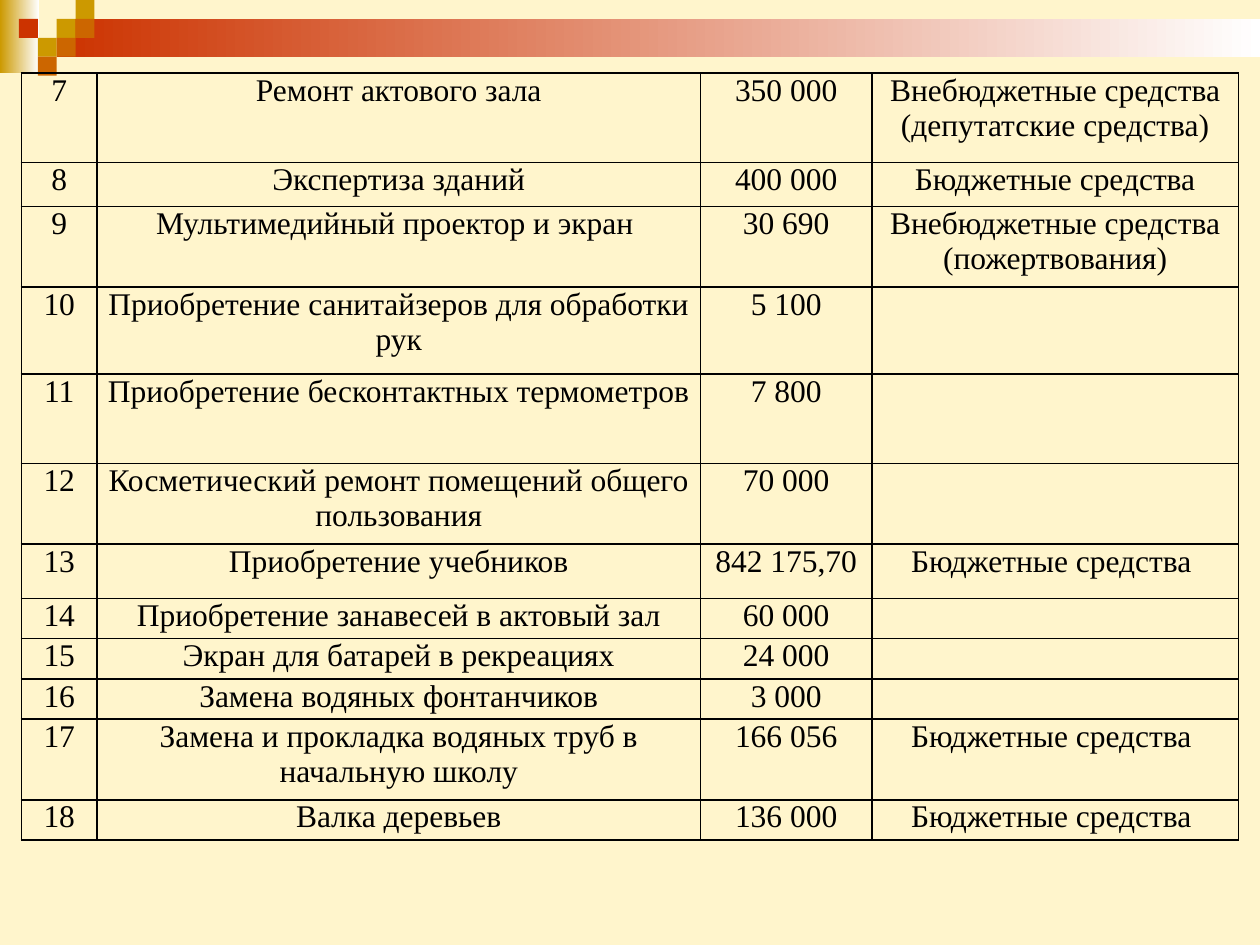
from lxml import etree
from pptx import Presentation
from pptx.dml.color import RGBColor
from pptx.enum import shapes, text
from pptx.oxml import parse_xml
from pptx.oxml.ns import nsdecls
from pptx.util import Inches, Pt

CREAM = RGBColor(0xFF, 0xF5, 0xCC)
GOLD = RGBColor(0xCC, 0x99, 0x00)
RED = RGBColor(0xCC, 0x33, 0x00)
ORANGE = RGBColor(0xCC, 0x66, 0x00)
WHITE = RGBColor(0xFF, 0xFF, 0xFF)
BLACK = RGBColor(0x00, 0x00, 0x00)

BUDGET = "Бюджетные средства"
EXTRA = "Внебюджетные средства"
COL_WIDTHS = [0.6, 4.79, 1.36, 2.91]
FIRST_NUMBER = 7
# Row height, expense, amount, source of funds
EXPENSES = [
    (0.71, "Ремонт актового зала", "350 000", EXTRA + " (депутатские средства)"),
    (0.35, "Экспертиза зданий", "400 000", BUDGET),
    (0.64, "Мультимедийный проектор и экран ", "30 690", EXTRA + " (пожертвования)"),
    (0.69, "Приобретение санитайзеров для обработки рук", "5 100", ""),
    (0.71, "Приобретение бесконтактных термометров", "7 800", ""),
    (0.64, "Косметический ремонт помещений общего пользования", "70 000", ""),
    (0.43, "Приобретение учебников", "842 175,70", BUDGET + " "),
    (0.32, "Приобретение занавесей в актовый зал", "60 000", ""),
    (0.32, "Экран для батарей в рекреациях", "24 000", ""),
    (0.32, "Замена водяных фонтанчиков", "3 000", ""),
    (0.64, "Замена и прокладка водяных труб в начальную школу", "166 056", BUDGET + " "),
    (0.32, "Валка деревьев", "136 000", BUDGET + " "),
]


def add_rect(s, left, top, width, height, color, fade=False):
    """Add a plain rectangle; fade runs its colour to white from left to right."""
    sp = s.shapes.add_shape(shapes.MSO_SHAPE.RECTANGLE, Inches(left), Inches(top),
                            Inches(width), Inches(height))
    sp.shadow.inherit = False
    sp.line.fill.background()
    if fade:
        sp.fill.gradient()
        sp.fill.gradient_angle = 0
        for stop, stop_color, position in zip(sp.fill.gradient_stops, (color, WHITE), (0, 1)):
            stop.color.rgb = stop_color
            stop.position = position
    else:
        sp.fill.solid()
        sp.fill.fore_color.rgb = color


def add_borders(cell):
    tc_pr = cell._tc.get_or_add_tcPr()
    for i, side in enumerate(("lnL", "lnR", "lnT", "lnB")):
        ln = parse_xml(f'<a:{side} {nsdecls("a")} w="{Pt(1)}"/>')
        solid = etree.SubElement(ln, ln.tag.replace(side, "solidFill"))
        etree.SubElement(solid, ln.tag.replace(side, "srgbClr"), val=str(BLACK))
        tc_pr.insert(i, ln)


prs = Presentation()
prs.slide_width, prs.slide_height = Inches(10), Inches(7.5)
s = prs.slides.add_slide(prs.slide_layouts[6])
s.background.fill.solid()
s.background.fill.fore_color.rgb = CREAM

# Header band with its mosaic of squares
add_rect(s, 0, 0, 0.31, 0.58, GOLD, fade=True)
add_rect(s, 0.45, 0.15, 9.55, 0.3, RED, fade=True)
SQUARE = 0.15
for col, row, color in [(3, 1, GOLD), (4, 0, GOLD), (4, 1, ORANGE), (2, 2, GOLD),
                        (1, 1, RED), (3, 2, ORANGE), (2, 3, ORANGE)]:
    add_rect(s, col * SQUARE, row * SQUARE, SQUARE, SQUARE, color)

# Expense table
heights = [expense[0] for expense in EXPENSES]
table = s.shapes.add_table(len(EXPENSES), len(COL_WIDTHS), Inches(0.17), Inches(0.58),
                           Inches(sum(COL_WIDTHS)), Inches(sum(heights))).table
table.first_row = table.horz_banding = False
for column, width in zip(table.columns, COL_WIDTHS):
    column.width = Inches(width)
for number, (row, (height, *values)) in enumerate(zip(table.rows, EXPENSES), FIRST_NUMBER):
    row.height = Inches(height)
    for cell, value in zip(row.cells, [str(number), *values]):
        cell.margin_left = cell.margin_right = Inches(0.07)
        cell.margin_top = cell.margin_bottom = 0
        cell.fill.background()
        add_borders(cell)
        p = cell.text_frame.paragraphs[0]
        p.text = value
        p.alignment = text.PP_ALIGN.CENTER
        p.font.name = "Times New Roman"
        p.font.size = Pt(18)
        p.font.color.rgb = BLACK

prs.save("out.pptx")
